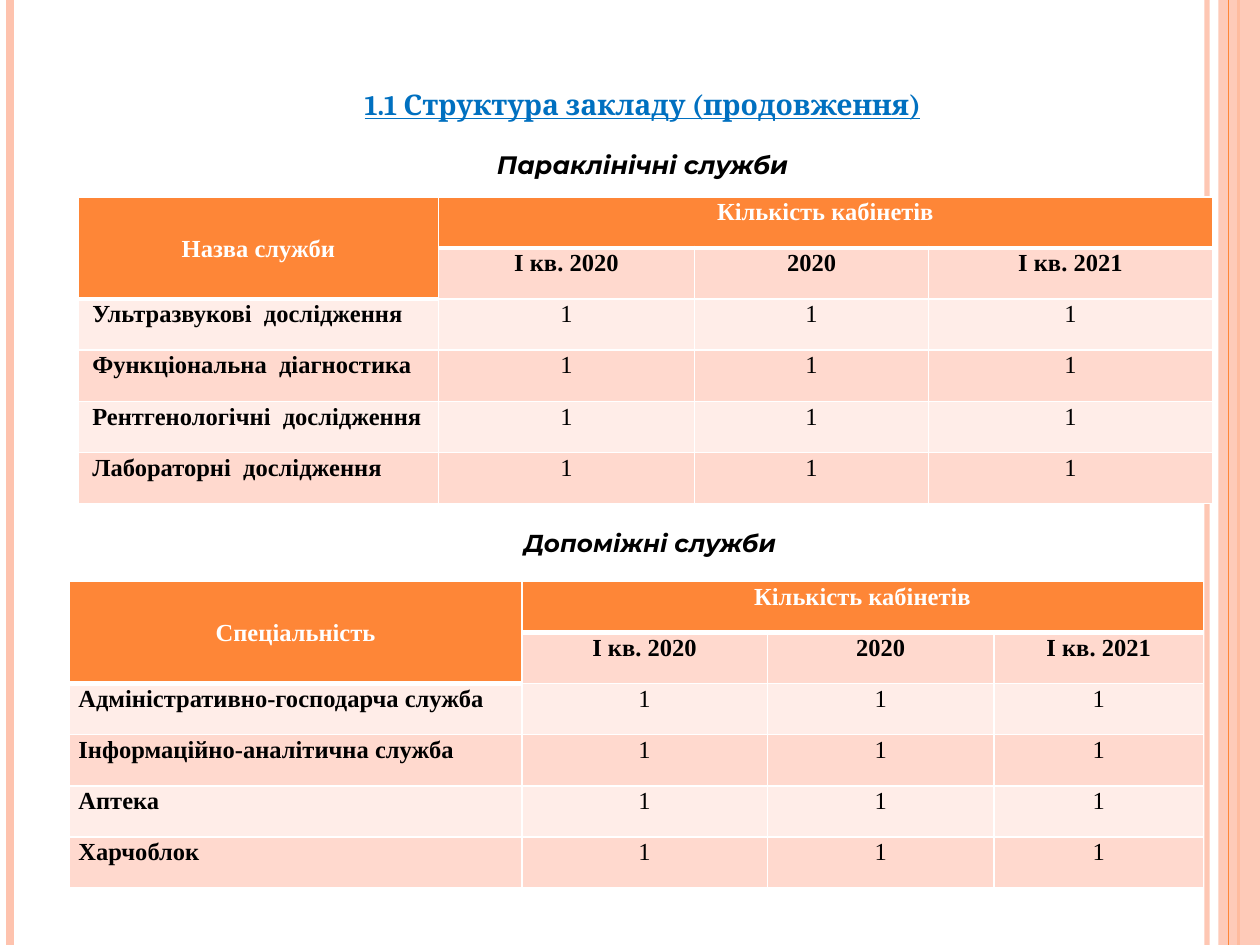
from lxml import etree
from pptx import Presentation
from pptx.dml.color import RGBColor
from pptx.enum import shapes, text
from pptx.oxml import ns
from pptx.util import Cm, Pt

HUES = {"peach": "FEC3AE", "orange": "FE8637", "blue": "0070C0", "black": "000000",
        "white": "FFFFFF", "pink": "FFD9CE", "pale": "FFEDE8"}
ALIGN = text.PP_ALIGN
HIGH = 19.05


def hue(name):
    return RGBColor.from_string(HUES[name])


def node(up, tag, **kw):
    return etree.SubElement(up, ns.qn(tag), **kw)


def fade(fill, alpha):
    """Make a solid fill partly opaque, in percent."""
    tint = fill._xPr.find(".//" + ns.qn("a:srgbClr"))
    node(tint, "a:alpha", val=str(alpha * 1000))


def put(para, words, font="Times New Roman", size=14, color="black", bold=True,
        slant=False, under=False, align=ALIGN.CENTER, lead=None, after=None, indent=0):
    para.alignment = align
    if lead:
        para.line_spacing = lead
    if after:
        para.space_after = Pt(after)
    if indent:
        para._p.get_or_add_pPr().set("indent", str(Cm(indent)))
    run = para.add_run()
    run.text = words
    face = run.font
    face.name, face.size, face.bold = font, Pt(size), bold
    face.italic, face.underline = slant, under
    face.color.rgb = hue(color)


class Deck:
    def __init__(self):
        self.file = Presentation()
        self.file.slide_width, self.file.slide_height = Cm(25.4), Cm(HIGH)
        self.page = self.file.slides.add_slide(self.file.slide_layouts[5])
        self.head = {"font": "Montserrat", "slant": True}

    def rule(self, x, color, width, alpha=100):
        line = self.page.shapes.add_connector(shapes.MSO_CONNECTOR.STRAIGHT,
                                              Cm(x), 0, Cm(x), Cm(HIGH))
        line.line.color.rgb = hue(color)
        line.line.width = Pt(width)
        if alpha < 100:
            fade(line.line.fill, alpha)
        node(line._element.spPr, "a:effectLst")

    def band(self, x, width, color, alpha):
        box = self.page.shapes.add_shape(shapes.MSO_SHAPE.RECTANGLE,
                                         Cm(x), 0, Cm(width), Cm(HIGH))
        box.shadow.inherit = False
        box.fill.solid()
        box.fill.fore_color.rgb = hue(color)
        fade(box.fill, alpha)
        box.line.fill.background()

    def title(self, main, sub):
        box = self.page.shapes.title
        box.left, box.top, box.width, box.height = Cm(1.78), Cm(1.19), Cm(22.35), Cm(3.18)
        frame = box.text_frame
        frame.vertical_anchor = text.MSO_ANCHOR.BOTTOM
        frame.margin_bottom = Cm(0.75)
        put(frame.paragraphs[0], main, font="Cambria", size=16.2, color="blue",
            under=True, after=16)
        put(frame.add_paragraph(), sub, size=14.4, **self.head)

    def label(self, words, x, y, width, height):
        box = self.page.shapes.add_textbox(Cm(x), Cm(y), Cm(width), Cm(height))
        frame = box.text_frame
        frame.word_wrap = True
        frame.vertical_anchor = text.MSO_ANCHOR.MIDDLE
        put(frame.paragraphs[0], words, **self.head)

    def dress(self, cell, fill, thick):
        cell.margin_left = cell.margin_right = Cm(0.18)
        cell.margin_top = cell.margin_bottom = 0
        props = cell._tc.get_or_add_tcPr()
        for side in "LRTB":
            width = 3 if thick and side == "B" else 1
            edge = node(props, "a:ln" + side, w=str(Pt(width)))
            node(node(edge, "a:solidFill"), "a:srgbClr", val=HUES["white"])
        cell.fill.solid()
        cell.fill.fore_color.rgb = hue(fill)

    def table(self, x, y, cols, name, rows, indent=0):
        tall = 1.03
        data = [[name, "Кількість кабінетів", "", ""],
                ["", "І кв. 2020", "2020", "І кв. 2021"]]
        data += [[row, "1", "1", "1"] for row in rows]
        grid = self.page.shapes.add_table(len(data), len(cols), Cm(x), Cm(y),
                                          Cm(sum(cols)), Cm(tall * len(data))).table
        grid.horz_banding = False
        for col, width in zip(grid.columns, cols):
            col.width = Cm(width)
        for r, line in enumerate(data):
            grid.rows[r].height = Cm(tall)
            for c, words in enumerate(line):
                top = r == 0 or (r == 1 and c == 0)
                cell = grid.cell(r, c)
                self.dress(cell, "orange" if top else "pink" if r % 2 else "pale", top)
                if words:
                    side = r > 1 and c == 0
                    put(cell.text_frame.paragraphs[0], words, lead=1.07,
                        color="white" if top else "black", bold=r < 2 or c == 0,
                        align=ALIGN.JUSTIFY if side else ALIGN.CENTER,
                        indent=indent if side else 0)
        grid.cell(0, 0).merge(grid.cell(1, 0))
        grid.cell(0, 0).vertical_anchor = text.MSO_ANCHOR.MIDDLE
        grid.cell(0, 1).merge(grid.cell(0, 3))


def main():
    deck = Deck()

    # Side stripes
    deck.rule(24.33, "peach", 3, 93)
    deck.rule(0.2, "peach", 4.5)
    deck.rule(24.97, "orange", 1.5)
    deck.band(24.56, 0.84, "peach", 87)
    deck.rule(24.77, "orange", 0.75)

    # Heading
    deck.title("1.1 Структура закладу (продовження)", "Параклінічні служби")

    # Paraclinical services
    deck.table(1.58, 3.97, [7.26, 5.16, 4.72, 5.72], "Назва служби",
               ["Ультразвукові  дослідження", "Функціональна  діагностика",
                "Рентгенологічні  дослідження", "Лабораторні  дослідження"], indent=0.1)

    # Support services
    deck.table(1.4, 11.72, [9.12, 4.95, 4.57, 4.22], "Спеціальність",
               ["Адміністративно-господарча служба", "Інформаційно-аналітична служба",
                "Аптека", "Харчоблок"])
    deck.label("Допоміжні служби", 8.94, 10.52, 8.33, 0.86)

    deck.file.save("out.pptx")


if __name__ == "__main__":
    main()
